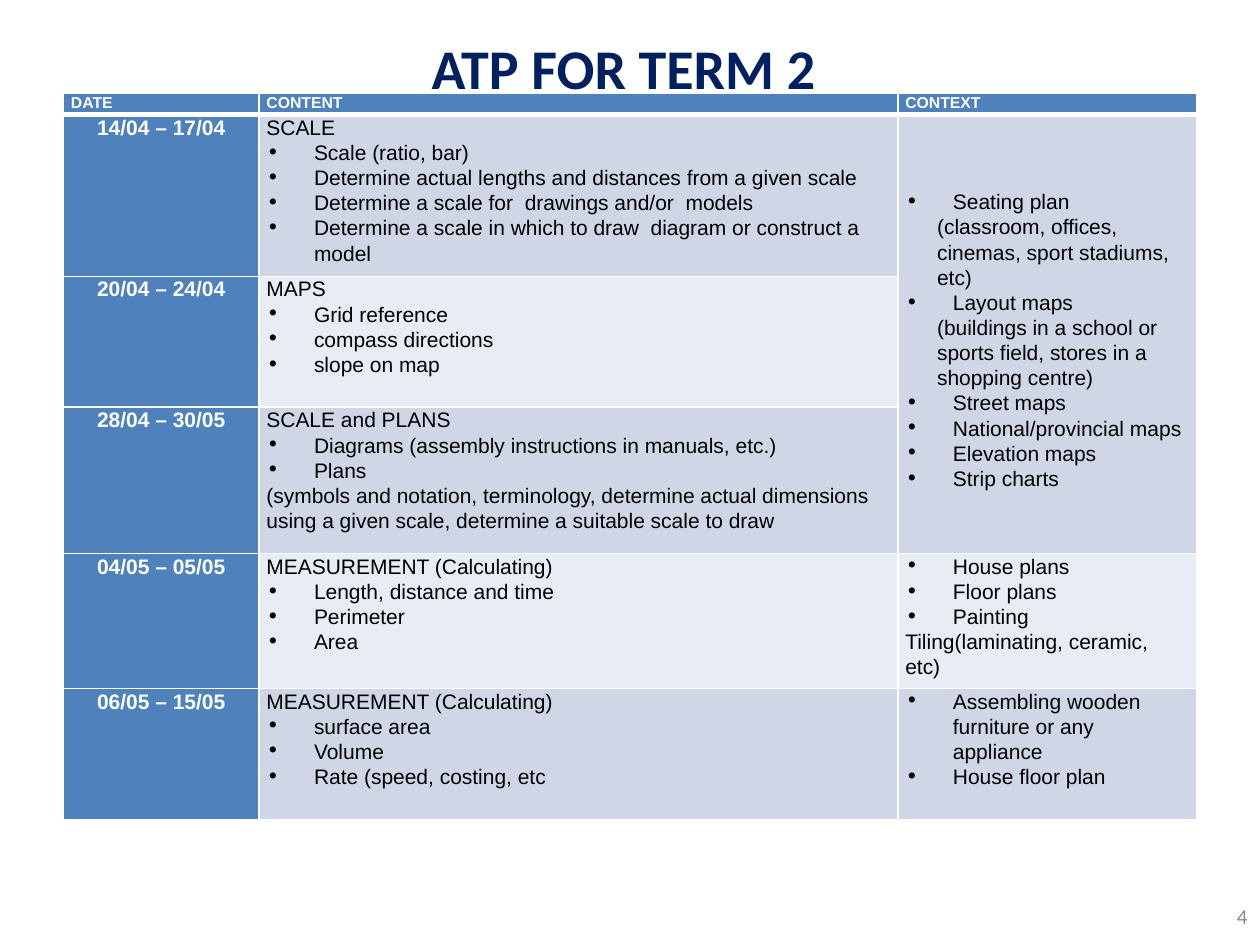
from dataclasses import dataclass

from lxml.etree import SubElement
from pptx import Presentation
from pptx.dml.color import RGBColor
from pptx.enum.text import MSO_ANCHOR, PP_ALIGN
from pptx.oxml.ns import qn
from pptx.util import Cm, Pt


@dataclass(frozen=True)
class Theme:
    navy: str = "002060"
    blue: str = "4F81BD"
    band_dark: str = "CFD7E7"
    band_light: str = "E8ECF4"
    white: str = "FFFFFF"
    black: str = "000000"
    grey: str = "888888"
    heading_font: str = "Calibri"
    body_font: str = "Arial"
    title_size: int = 32
    body_size: int = 12
    header_size: int = 9


@dataclass(frozen=True)
class Line:
    text: str
    bullet: bool = False
    indent: float = 0


THEME = Theme()
BULLET_INDENT = 0.96
NOTE_INDENT = 0.64
CONTEXT_TOP = 1.5

COLUMN_WIDTHS = (3.94, 12.88, 6.02)
ROW_HEIGHTS = (0.43, 3.18, 2.64, 2.95, 2.36, 2.64)
HEADERS = ("DATE", "CONTENT", "CONTEXT")


def bullets(*texts):
    return [Line(text, bullet=True) for text in texts]


def note(text):
    return [Line(text, indent=NOTE_INDENT)]


# Each week: date, content lines, context lines (None continues the cell above)
WEEKS = (
    ("14/04 – 17/04",
     [Line("SCALE")] + bullets(
         "Scale (ratio, bar)",
         "Determine actual lengths and distances from a given scale",
         "Determine a scale for  drawings and/or  models",
         "Determine a scale in which to draw  diagram or construct a model"),
     bullets("Seating plan")
     + note("(classroom, offices, cinemas, sport stadiums, etc)")
     + bullets("Layout maps")
     + note("(buildings in a school or sports field, stores in a shopping centre)")
     + bullets("Street maps", "National/provincial maps", "Elevation maps", "Strip charts")),
    ("20/04 – 24/04",
     [Line("MAPS")] + bullets("Grid reference", "compass directions", "slope on map"),
     None),
    ("28/04 – 30/05",
     [Line("SCALE and PLANS")]
     + bullets("Diagrams (assembly instructions in manuals, etc.)", "Plans")
     + [Line("(symbols and notation, terminology, determine actual dimensions "
             "using a given scale, determine a suitable scale to draw")],
     None),
    ("04/05 – 05/05",
     [Line("MEASUREMENT (Calculating)")]
     + bullets("Length, distance and time", "Perimeter", "Area"),
     bullets("House plans", "Floor plans", "Painting")
     + [Line("Tiling(laminating, ceramic, etc)")]),
    ("06/05 – 15/05",
     [Line("MEASUREMENT (Calculating)")]
     + bullets("surface area", "Volume", "Rate (speed, costing, etc"),
     bullets("Assembling wooden furniture or any appliance", "House floor plan")),
)


def set_font(paragraph, name, size, color, bold=False):
    font = paragraph.font
    font.name = name
    font.size = Pt(size)
    font.bold = bold
    font.color.rgb = RGBColor.from_string(color)


def add_label(slide, text, box, align, size, color, bold=False):
    frame = slide.shapes.add_textbox(*map(Cm, box)).text_frame
    frame.word_wrap = True
    frame.vertical_anchor = MSO_ANCHOR.MIDDLE
    paragraph = frame.paragraphs[0]
    paragraph.text = text
    paragraph.alignment = align
    set_font(paragraph, THEME.heading_font, size, color, bold)


def indent_paragraph(paragraph, line):
    properties = paragraph._p.get_or_add_pPr()
    if line.bullet:
        properties.set("marL", str(Cm(BULLET_INDENT)))
        properties.set("indent", str(-Cm(BULLET_INDENT)))
        bullet_color = SubElement(properties, qn("a:buClr"))
        SubElement(bullet_color, qn("a:srgbClr"), val=THEME.black)
        SubElement(properties, qn("a:buChar"), char="∙")
    else:
        properties.set("marL", str(Cm(line.indent)))
        properties.set("indent", "0")


def set_borders(cell, top=1, bottom=1):
    properties = cell._tc.get_or_add_tcPr()
    for side, width in (("L", 1), ("R", 1), ("T", top), ("B", bottom)):
        border = SubElement(properties, qn(f"a:ln{side}"), w=str(Pt(width)))
        fill = SubElement(border, qn("a:solidFill"))
        SubElement(fill, qn("a:srgbClr"), val=THEME.white)


def style_cell(cell, fill, top=1, bottom=1):
    set_borders(cell, top, bottom)
    cell.fill.solid()
    cell.fill.fore_color.rgb = RGBColor.from_string(fill)
    cell.margin_left = cell.margin_right = Cm(0.15)
    cell.margin_top = cell.margin_bottom = 0


def write_cell(cell, lines, size, color, bold=False, align=PP_ALIGN.LEFT):
    frame = cell.text_frame
    for index, line in enumerate(lines):
        paragraph = frame.add_paragraph() if index else frame.paragraphs[0]
        paragraph.text = line.text
        indent_paragraph(paragraph, line)
        paragraph.alignment = align
        paragraph.line_spacing = 1.07
        set_font(paragraph, THEME.body_font, size, color, bold)


def add_schedule(slide):
    table = slide.shapes.add_table(
        len(ROW_HEIGHTS), len(COLUMN_WIDTHS), Cm(1.28), Cm(1.88),
        Cm(sum(COLUMN_WIDTHS)), Cm(sum(ROW_HEIGHTS))).table
    for column, width in zip(table.columns, COLUMN_WIDTHS):
        column.width = Cm(width)
    for row, height in zip(table.rows, ROW_HEIGHTS):
        row.height = Cm(height)

    # Header row
    for column, header in enumerate(HEADERS):
        cell = table.cell(0, column)
        style_cell(cell, THEME.blue, bottom=3)
        write_cell(cell, [Line(header)], THEME.header_size, THEME.white, bold=True)

    # Week rows
    for row, (date, content, context) in enumerate(WEEKS, start=1):
        band = THEME.band_dark if row % 2 else THEME.band_light
        date_cell, content_cell, context_cell = (table.cell(row, c) for c in range(3))
        for cell, fill in ((date_cell, THEME.blue), (content_cell, band), (context_cell, band)):
            style_cell(cell, fill, top=3 if row == 1 else 1)
        write_cell(date_cell, [Line(date)], THEME.body_size, THEME.white,
                   bold=True, align=PP_ALIGN.CENTER)
        write_cell(content_cell, content, THEME.body_size, THEME.black)
        if context:
            write_cell(context_cell, context, THEME.body_size, THEME.black)

    # The first context covers three weeks
    shared_context = table.cell(1, 2)
    shared_context.merge(table.cell(3, 2))
    shared_context.margin_top = Cm(CONTEXT_TOP)


def main():
    presentation = Presentation()
    presentation.slide_width = Cm(25.4)
    presentation.slide_height = Cm(19.05)
    slide = presentation.slides.add_slide(presentation.slide_layouts[6])

    # Title, schedule and page number
    add_label(slide, "ATP FOR TERM 2 ", (1.27, 0.76, 22.86, 1.17), PP_ALIGN.CENTER,
              THEME.title_size, THEME.navy, bold=True)
    add_schedule(slide)
    add_label(slide, "4", (19.48, 17.96, 5.92, 1.02), PP_ALIGN.RIGHT,
              THEME.body_size, THEME.grey)

    presentation.save("out.pptx")


if __name__ == "__main__":
    main()
